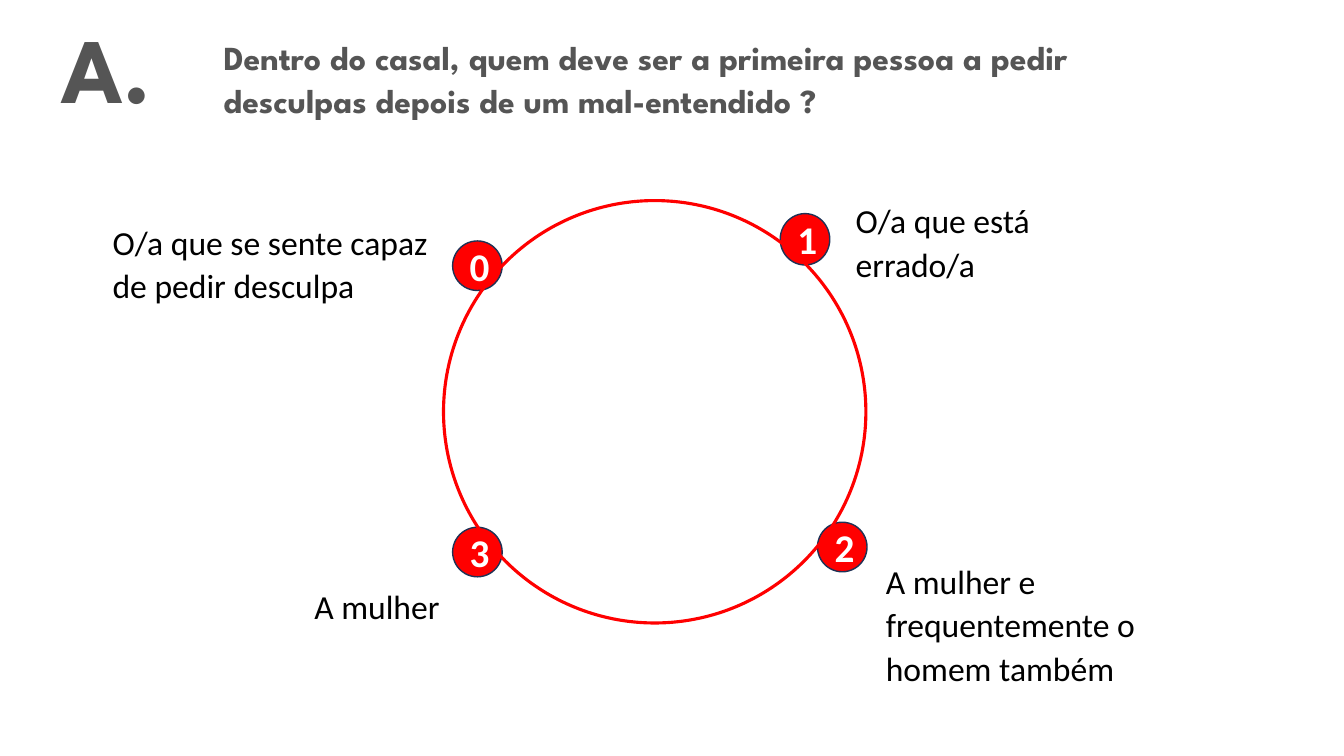
"""Build a quiz slide with four numbered answers around a ring."""
from pptx import Presentation
from pptx.dml.color import RGBColor
from pptx.enum.shapes import MSO_SHAPE
from pptx.enum.text import MSO_ANCHOR, MSO_AUTO_SIZE, PP_ALIGN
from pptx.util import Pt

OVAL, RECTANGLE = MSO_SHAPE.OVAL, MSO_SHAPE.RECTANGLE
TOP, MIDDLE = MSO_ANCHOR.TOP, MSO_ANCHOR.MIDDLE
LEFT, CENTER = PP_ALIGN.LEFT, PP_ALIGN.CENTER
GROW = MSO_AUTO_SIZE.SHAPE_TO_FIT_TEXT

RED, NAVY, WHITE, BLACK, GREY = "FF0000", "1E3256", "FFFFFF", "000000", "555555"
QUESTION = ("Dentro do casal, quem deve ser a primeira pessoa a pedir "
            "desculpas depois de um mal-entendido ?", (152.6, 20.9, 699, 69.1))
LETTER = ("A.", (36.7, 4.3, 92.9, 87.1))
BADGES = [
    ("3", (323.3, 376.6, 35.4, 35.4)),
    ("2", (583.9, 373, 35.4, 35.4)),
    ("1", (557.3, 152.6, 35.4, 36.7)),
    ("0", (323.3, 172.1, 35.4, 35.4)),
]
ANSWERS = [
    ("O/a que se sente capaz de pedir desculpa", (73.4, 152.6, 247.7, 68.4)),
    ("O/a que está errado/a", (604.1, 137.5, 208.8, 68.4)),
    ("A mulher e frequentemente o homem também", (625.7, 395.3, 214.6, 99.4)),
    ("A mulher", (217.4, 413.3, 118.8, 36.7)),
]
RING = (316.8, 143.3, 301.7, 301.7)

BODY = {"line_spacing": 1.07, "space_after": Pt(8), "alignment": LEFT}
HEADING_FONT = {"name": "League Spartan", "size": Pt(24), "bold": True}
LETTER_FONT = {**HEADING_FONT, "size": Pt(66)}
ANSWER_FONT = {"name": "Calibri", "size": Pt(24), "bold": False}
BADGE_FONT = {"name": "Calibri", "size": Pt(28), "bold": True}
GROWING = {"word_wrap": True, "vertical_anchor": TOP, "auto_size": GROW}
CENTERED = {"word_wrap": True, "vertical_anchor": MIDDLE}


def color(value):
    return RGBColor.from_string(value)


def apply(target, values):
    for name, value in values.items():
        setattr(target, name, value)


def write(box, text, font, ink, layout, paragraph):
    frame = box.text_frame
    apply(frame, layout)
    para = frame.paragraphs[0]
    apply(para, paragraph)
    span = para.add_run()
    span.text = text
    apply(span.font, font)
    span.font.color.rgb = color(ink)


def add_text(page, text, place, font, paragraph):
    box = page.shapes.add_textbox(*map(Pt, place))
    write(box, text, font, GREY, GROWING, paragraph)


def add_shape(page, kind, place, fill=None, line=None, width=1):
    shape = page.shapes.add_shape(kind, *map(Pt, place))
    shape.shadow.inherit = False
    if fill:
        shape.fill.solid()
        shape.fill.fore_color.rgb = color(fill)
    else:
        shape.fill.background()
    if line:
        shape.line.color.rgb = color(line)
        shape.line.width = Pt(width)
    else:
        shape.line.fill.background()
    return shape


def main():
    deck = Presentation()
    deck.slide_width, deck.slide_height = Pt(960), Pt(540)
    page = deck.slides.add_slide(deck.slide_layouts[6])
    add_text(page, *QUESTION, HEADING_FONT, BODY)
    for text, place in BADGES:
        badge = add_shape(page, OVAL, place, RED, NAVY)
        write(badge, text, BADGE_FONT, WHITE, CENTERED, {"alignment": CENTER})
    for text, place in ANSWERS:
        answer = add_shape(page, RECTANGLE, place, WHITE)
        write(answer, text, ANSWER_FONT, BLACK, GROWING, BODY)
    add_text(page, *LETTER, LETTER_FONT, {"alignment": LEFT})
    add_shape(page, OVAL, RING, line=RED, width=2.25)
    deck.save("out.pptx")


if __name__ == "__main__":
    main()
